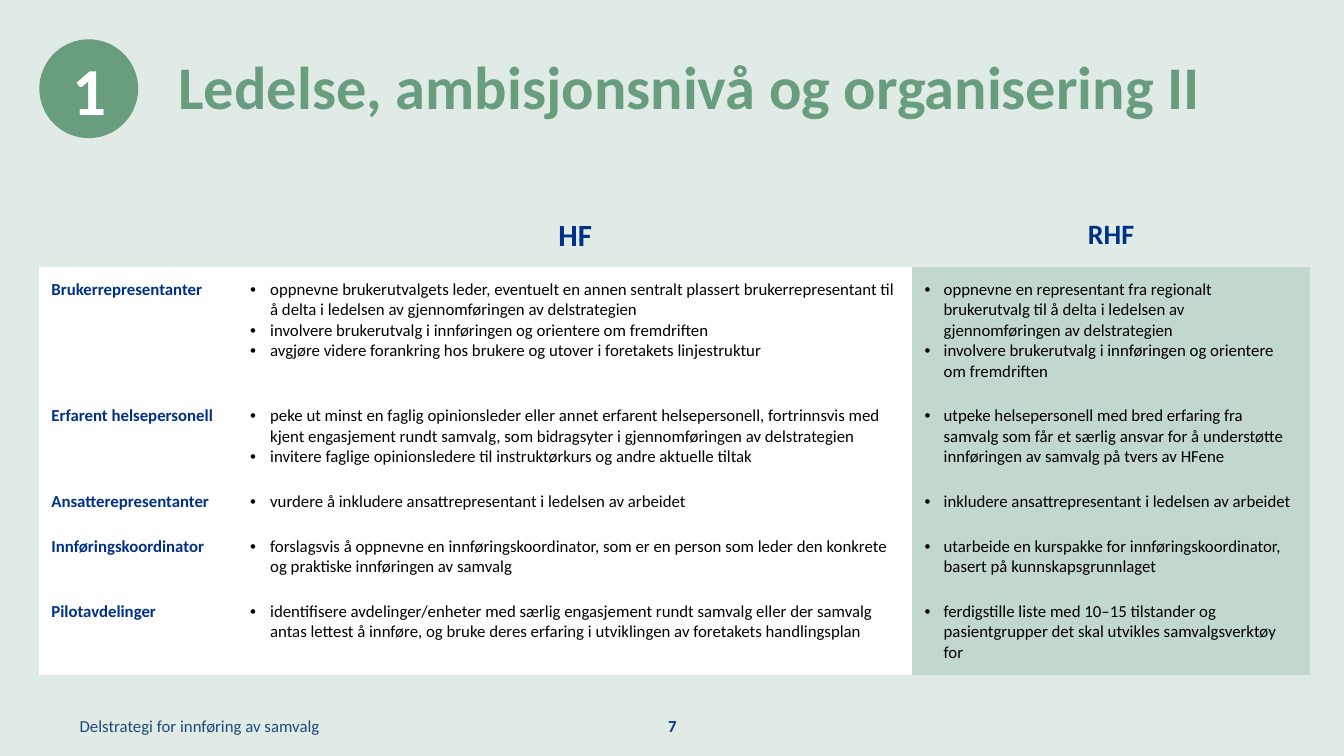
from lxml import etree
from pptx import Presentation
from pptx.dml.color import RGBColor
from pptx.enum.shapes import MSO_SHAPE
from pptx.enum.text import MSO_ANCHOR, PP_ALIGN
from pptx.oxml.ns import qn
from pptx.util import Inches, Pt

OVAL = MSO_SHAPE.OVAL
TOP, MIDDLE = MSO_ANCHOR.TOP, MSO_ANCHOR.MIDDLE
LEFT, CENTER = PP_ALIGN.LEFT, PP_ALIGN.CENTER
FONT = "Calibri"
PLAIN_TABLE = "{2D5ABB26-0587-4C30-8999-92F81FD0307C}"
COLORS = {
    "background": "E1EBE5",
    "green": "689D7F",
    "pale_green": "C3D8CC",
    "white": "FFFFFF",
    "black": "000000",
    "navy": "003087",
    "page": "003388",
    "footer": "1F497D",
}
COLUMNS = [1.97, 6.69, 3.94]
ROWS = [0.61, 1.25, 0.85, 0.44, 0.64, 0.84]
HEADERS = [("", 18), ("HF", 22), ("RHF", 20)]
MEASURES = [
    ("Brukerrepresentanter",
     ["oppnevne brukerutvalgets leder, eventuelt en annen sentralt plassert "
      "brukerrepresentant til å delta i ledelsen av gjennomføringen av delstrategien",
      "involvere brukerutvalg i innføringen og orientere om fremdriften",
      "avgjøre videre forankring hos brukere og utover i foretakets linjestruktur"],
     ["oppnevne en representant fra regionalt brukerutvalg til å delta i ledelsen "
      "av gjennomføringen av delstrategien",
      "involvere brukerutvalg i innføringen og orientere om fremdriften"]),
    ("Erfarent helsepersonell",
     ["peke ut minst en faglig opinionsleder eller annet erfarent helsepersonell, "
      "fortrinnsvis med kjent engasjement rundt samvalg, som bidragsyter i "
      "gjennomføringen av delstrategien",
      "invitere faglige opinionsledere til instruktørkurs og andre aktuelle tiltak"],
     ["utpeke helsepersonell med bred erfaring fra samvalg som får et særlig ansvar "
      "for å understøtte innføringen av samvalg på tvers av HFene"]),
    ("Ansatterepresentanter",
     ["vurdere å inkludere ansattrepresentant i ledelsen av arbeidet"],
     ["inkludere ansattrepresentant i ledelsen av arbeidet"]),
    ("Innføringskoordinator",
     ["forslagsvis å oppnevne en innføringskoordinator, som er en person som leder "
      "den konkrete og praktiske innføringen av samvalg"],
     ["utarbeide en kurspakke for innføringskoordinator, basert på kunnskapsgrunnlaget"]),
    ("Pilotavdelinger",
     ["identifisere avdelinger/enheter med særlig engasjement rundt samvalg eller der "
      "samvalg antas lettest å innføre, og bruke deres erfaring i utviklingen av "
      "foretakets handlingsplan"],
     ["ferdigstille liste med 10–15 tilstander og pasientgrupper det skal utvikles "
      "samvalgsverktøy for"]),
]


def rgb(name):
    return RGBColor.from_string(COLORS[name])


def set_margins(obj, left, top, right, bottom):
    obj.margin_left, obj.margin_top = Inches(left), Inches(top)
    obj.margin_right, obj.margin_bottom = Inches(right), Inches(bottom)


def write(tf, lines, size, color, bold=False, align=LEFT, indent=0):
    tf.text = "\n".join(lines)
    tf.word_wrap = True
    for p in tf.paragraphs:
        p.alignment = align
        if indent:
            pPr = p._p.get_or_add_pPr()
            pPr.set("marL", str(Inches(indent)))
            pPr.set("indent", str(-Inches(indent)))
            etree.SubElement(pPr, qn("a:buFont")).set("typeface", "Arial")
            etree.SubElement(pPr, qn("a:buChar")).set("char", "•")
        for r in p.runs:
            r.font.name = FONT
            r.font.size = Pt(size)
            r.font.bold = bold
            r.font.color.rgb = rgb(color)


def add_heading(slide, x, y, width, badge):
    sp = slide.shapes.title
    sp.left, sp.top = Inches(x + badge + 0.4), Inches(y + 0.18)
    sp.width, sp.height = Inches(width - badge - 0.4), Inches(0.79)
    tf = sp.text_frame
    write(tf, ["Ledelse, ambisjonsnivå og organisering II"], 43.2, "green", True)
    set_margins(tf, 0, 0, 0, 0)
    tf.vertical_anchor = TOP
    tf.paragraphs[0].line_spacing = 0.9

    sp = slide.shapes.add_shape(OVAL, Inches(x), Inches(y), Inches(badge), Inches(badge))
    sp.shadow.inherit = False
    sp.fill.solid()
    sp.fill.fore_color.rgb = rgb("green")
    sp.line.fill.background()
    tf = sp.text_frame
    write(tf, ["1"], 48, "white", True, CENTER)
    set_margins(tf, 0.12, 0.05, 0.1, 0.05)
    tf.vertical_anchor = MIDDLE


def fill_cell(cell, fill, *text, **style):
    cell.fill.solid()
    cell.fill.fore_color.rgb = rgb(fill)
    set_margins(cell, 0.12, 0.12, 0.12, 0.12)
    write(cell.text_frame, *text, **style)


def add_measures(slide, x, y):
    frame = slide.shapes.add_table(len(ROWS), len(COLUMNS), Inches(x), Inches(y),
                                   Inches(sum(COLUMNS)), Inches(sum(ROWS)))
    table = frame.table
    table.first_row = table.horz_banding = False
    next(frame.element.iter(qn("a:tableStyleId"))).text = PLAIN_TABLE
    for column, width in zip(table.columns, COLUMNS):
        column.width = Inches(width)
    for row, height in zip(table.rows, ROWS):
        row.height = Inches(height)
    for col, (label, size) in enumerate(HEADERS):
        fill_cell(table.cell(0, col), "background", [label], size, "navy",
                  bold=True, align=CENTER)
    for row, (group, hf, rhf) in enumerate(MEASURES, 1):
        fill_cell(table.cell(row, 0), "white", [group], 12, "navy", bold=True)
        fill_cell(table.cell(row, 1), "white", hf, 12, "black", indent=0.2)
        fill_cell(table.cell(row, 2), "pale_green", rhf, 12, "black", indent=0.19)


def add_footer(slide, x, y, height):
    parts = [
        (x, 3.09, "Delstrategi for innføring av samvalg", "footer", False, LEFT, 0),
        (x + 5.44, 0.88, "7", "page", True, CENTER, 0.1),
    ]
    for left, width, text, color, bold, align, margin in parts:
        sp = slide.shapes.add_textbox(Inches(left), Inches(y), Inches(width), Inches(height))
        tf = sp.text_frame
        write(tf, [text], 12, color, bold, align)
        set_margins(tf, margin, 0.05, 0.1, 0.05)
        tf.vertical_anchor = MIDDLE


def main():
    prs = Presentation()
    prs.slide_width, prs.slide_height = Inches(13.33), Inches(7.5)
    slide = prs.slides.add_slide(prs.slide_layouts[5])
    slide.background.fill.solid()
    slide.background.fill.fore_color.rgb = rgb("background")
    add_heading(slide, 0.39, 0.39, 12.19, 0.98)
    add_measures(slide, 0.39, 2.04)
    add_footer(slide, 0.79, 7.04, 0.32)
    prs.save("out.pptx")


if __name__ == "__main__":
    main()
